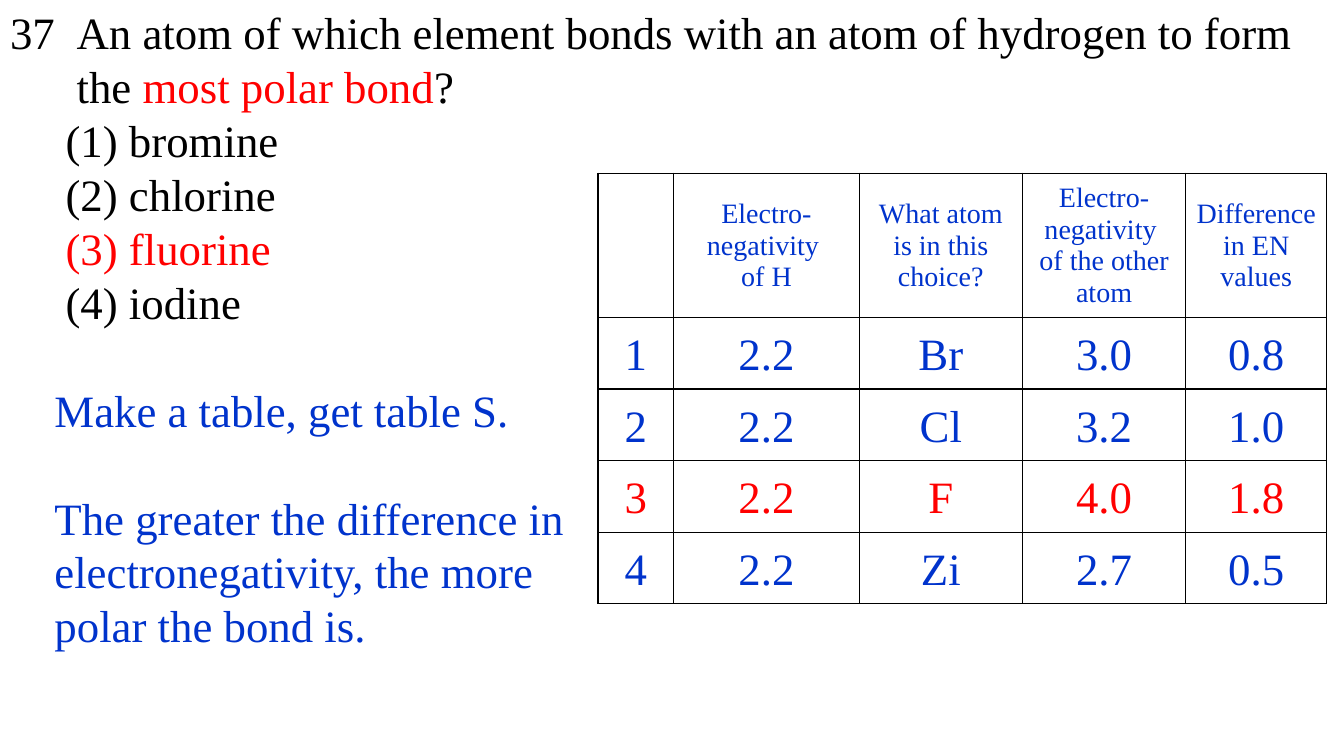
from dataclasses import dataclass

from lxml import etree
from pptx import Presentation
from pptx.dml.color import RGBColor
from pptx.enum.text import MSO_ANCHOR, MSO_AUTO_SIZE, PP_ALIGN
from pptx.oxml.ns import qn
from pptx.util import Emu, Inches, Pt

LEFT, CENTER = PP_ALIGN.LEFT, PP_ALIGN.CENTER
TOP, MIDDLE = MSO_ANCHOR.TOP, MSO_ANCHOR.MIDDLE
NO_AUTOFIT = MSO_AUTO_SIZE.NONE

WIDTH, HEIGHT = Inches(13.33), Inches(7.5)
FONT = "Times New Roman"
BLACK, RED, BLUE = "000000", "FF0000", "0033CC"
LARGE, SMALL = 32, 20
LINE, SMALL_LINE = Pt(38.5), Pt(22.5)


@dataclass(frozen=True)
class Span:
    text: str
    color: str


@dataclass(frozen=True)
class Line:
    text: str
    color: str
    indent: float
    gap_before: int = 0


@dataclass(frozen=True)
class Row:
    cells: tuple[str, ...]
    color: str = BLUE
    size: int = LARGE
    pitch: int = LINE
    height: float = 9.47


QUESTION = (
    Span("37\tAn atom of which element bonds with an atom of hydrogen to form the ", BLACK),
    Span("most polar bond", RED),
    Span("?", BLACK),
)
QUESTION_INDENT = 0.66
CHOICE_INDENT, NOTE_INDENT = 0.55, 0.44
LINES = (
    Line("(1) bromine", BLACK, CHOICE_INDENT),
    Line("(2) chlorine", BLACK, CHOICE_INDENT),
    Line("(3) fluorine", RED, CHOICE_INDENT),
    Line("(4) iodine", BLACK, CHOICE_INDENT),
    Line("Make a table, get table S.", BLUE, NOTE_INDENT, LINE),
    Line("The greater the difference in electronegativity, the more polar the bond is.",
         BLUE, NOTE_INDENT, LINE),
)
ROWS = (
    Row(("", "Electro-\nnegativity \nof H", "What atom is in this choice?",
         "Electro-\nnegativity \nof the other atom", "Difference in EN values"),
        size=SMALL, pitch=SMALL_LINE, height=19.07),
    Row(("1", "2.2", "Br", "3.0", "0.8")),
    Row(("2", "2.2", "Cl", "3.2", "1.0")),
    Row(("3", "2.2", "F", "4.0", "1.8"), color=RED),
    Row(("4", "2.2", "Zi", "2.7", "0.5")),
)
COLUMN_WIDTHS = (5.63, 13.8, 12.15, 12.15, 10.5)


def across(percent: float) -> Emu:
    return Emu(round(WIDTH * percent / 100))


def down(percent: float) -> Emu:
    return Emu(round(HEIGHT * percent / 100))


def style_font(font, size: int, color: str) -> None:
    font.name = FONT
    font.size = Pt(size)
    font.color.rgb = RGBColor.from_string(color)


def place(box, left: float, top: float, width: float, height: float) -> None:
    """Move a placeholder, in percent of the slide, and prepare its text frame."""
    box.left, box.top = across(left), down(top)
    box.width, box.height = across(width), down(height)
    frame = box.text_frame
    frame.word_wrap = True
    frame.auto_size = NO_AUTOFIT
    frame.vertical_anchor = TOP


def style_paragraph(para, indent: float, hanging: float, gap_before: int) -> None:
    para.alignment = LEFT
    para.line_spacing = LINE
    para.space_before = Emu(gap_before)
    properties = para._p.get_or_add_pPr()
    properties.set("marL", str(Inches(indent)))
    properties.set("indent", str(-Inches(hanging)))
    etree.SubElement(properties, qn("a:buNone"))


def write_question(box) -> None:
    para = box.text_frame.paragraphs[0]
    style_paragraph(para, QUESTION_INDENT, QUESTION_INDENT, 0)
    for span in QUESTION:
        run = para.add_run()
        run.text = span.text
        style_font(run.font, LARGE, span.color)


def write_lines(box) -> None:
    frame = box.text_frame
    frame.text = "\n".join(line.text for line in LINES)
    for para, line in zip(frame.paragraphs, LINES):
        style_paragraph(para, line.indent, 0, line.gap_before)
        style_font(para.runs[0].font, LARGE, line.color)


def add_borders(cell) -> None:
    properties = cell._tc.get_or_add_tcPr()
    for side in ("lnL", "lnR", "lnT", "lnB"):
        border = etree.SubElement(properties, qn(f"a:{side}"), w=str(Pt(1)))
        fill = etree.SubElement(border, qn("a:solidFill"))
        etree.SubElement(fill, qn("a:srgbClr"), val=BLACK)


def fill_cell(cell, text: str, row: Row) -> None:
    add_borders(cell)
    cell.fill.background()
    cell.vertical_anchor = MIDDLE
    para = cell.text_frame.paragraphs[0]
    para.text = text
    para.alignment = CENTER
    para.line_spacing = row.pitch
    for run in para.runs:
        style_font(run.font, row.size, row.color)


def add_electronegativity_table(page) -> None:
    frame = page.shapes.add_table(
        len(ROWS), len(COLUMN_WIDTHS), across(44.5), down(22.93),
        across(sum(COLUMN_WIDTHS)), down(sum(row.height for row in ROWS)))
    table = frame.table
    table.first_row = table.horz_banding = False
    for column, width in zip(table.columns, COLUMN_WIDTHS):
        column.width = across(width)
    for table_row, row in zip(table.rows, ROWS):
        table_row.height = down(row.height)
        for cell, text in zip(table_row.cells, row.cells):
            fill_cell(cell, text, row)


def main() -> None:
    deck = Presentation()
    deck.slide_width, deck.slide_height = WIDTH, HEIGHT
    page = deck.slides.add_slide(deck.slide_layouts[1])
    question, body = page.placeholders
    place(question, 0, 0, 100, 15)
    write_question(question)
    place(body, 0, 14.27, 44, 73.2)
    write_lines(body)
    add_electronegativity_table(page)
    deck.save("out.pptx")


if __name__ == "__main__":
    main()
